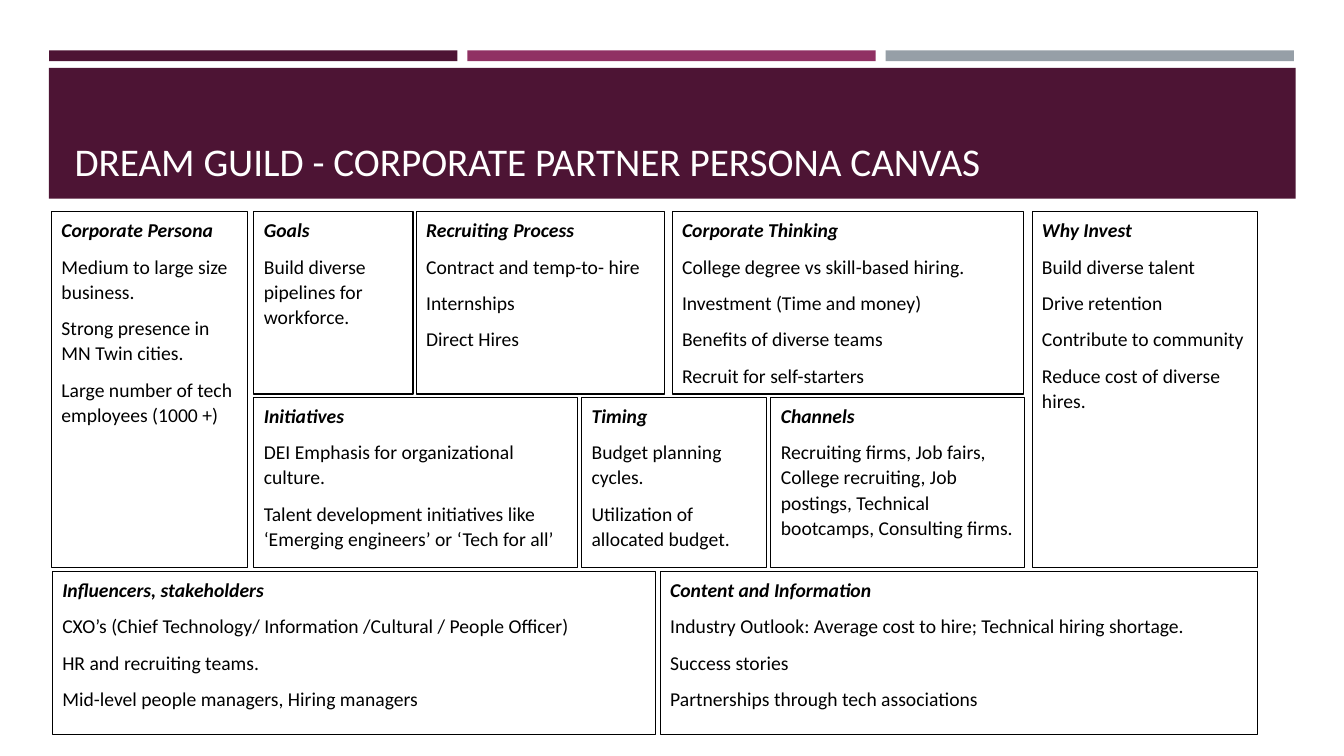
"""Build the corporate partner persona canvas slide."""
import pptx
import pptx.util
import pptx.dml.color
import pptx.enum.shapes
import pptx.enum.text

Cm = pptx.util.Cm
Pt = pptx.util.Pt
RGBColor = pptx.dml.color.RGBColor
RECT = pptx.enum.shapes.MSO_SHAPE.RECTANGLE
ANCHOR = pptx.enum.text.MSO_ANCHOR
ALIGN = pptx.enum.text.PP_ALIGN

PLUM = RGBColor(0x4D, 0x14, 0x34)
BERRY = RGBColor(0x90, 0x31, 0x63)
GRAY = RGBColor(0x96, 0x9F, 0xA7)
WHITE = RGBColor(0xFF, 0xFF, 0xFF)
BLACK = RGBColor(0x00, 0x00, 0x00)

TOP, MID, LOW = 5.33, 10.01, 14.4
TALL, UPPER, LOWER, BASE = 8.97, 4.6, 4.29, 4.1

PANELS = [
    (1.3, TOP, 4.95, TALL, "Corporate Persona", [
        "Medium to large size business.",
        "Strong presence in MN Twin cities.",
        "Large number of tech employees (1000 +)"]),
    (6.4, TOP, 4.01, UPPER, "Goals", [
        "Build diverse pipelines for workforce."]),
    (10.49, TOP, 6.25, UPPER, "Recruiting Process", [
        "Contract and temp-to- hire",
        "Internships",
        "Direct Hires"]),
    (16.94, TOP, 8.86, UPPER, "Corporate Thinking", [
        "College degree vs skill-based hiring.",
        "Investment (Time and money)",
        "Benefits of diverse teams",
        "Recruit for self-starters"]),
    (26.01, TOP, 5.69, TALL, "Why Invest", [
        "Build diverse talent",
        "Drive retention",
        "Contribute to community",
        "Reduce cost of diverse hires."]),
    (6.4, MID, 8.15, LOWER, "Initiatives", [
        "DEI Emphasis for organizational culture.",
        "Talent development initiatives like ‘Emerging engineers’ or ‘Tech for all’"]),
    (14.66, MID, 4.65, LOWER, "Timing", [
        "Budget planning cycles.",
        "Utilization of allocated budget."]),
    (19.43, MID, 6.38, LOWER, "Channels", [
        "Recruiting firms, Job fairs, College recruiting, Job postings, "
        "Technical bootcamps, Consulting firms."]),
    (1.32, LOW, 15.19, BASE, "Influencers, stakeholders", [
        "CXO’s (Chief Technology/ Information /Cultural / People Officer)",
        "HR and recruiting teams.",
        "Mid-level people managers, Hiring managers"]),
    (16.64, LOW, 15.06, BASE, "Content and Information", [
        "Industry Outlook: Average cost to hire; Technical hiring shortage.",
        "Success stories",
        "Partnerships through tech associations"]),
]

deck = pptx.Presentation()
deck.slide_width = Cm(33.87)
deck.slide_height = Cm(19.05)
slide = deck.slides.add_slide(deck.slide_layouts[6])


def add_box(left, top, width, height, fill):
    box = slide.shapes.add_shape(RECT, Cm(left), Cm(top), Cm(width), Cm(height))
    box.shadow.inherit = False
    box.fill.solid()
    box.fill.fore_color.rgb = fill
    box.line.fill.background()
    return box


def style(para, size, color):
    para.alignment = ALIGN.LEFT
    para.font.name = "Calibri"
    para.font.size = Pt(size)
    para.font.color.rgb = color


for col, color in enumerate([PLUM, BERRY, GRAY]):
    add_box(1.24 + col * 10.54, 1.27, 10.29, 0.27, color)
add_box(1.23, 1.71, 31.42, 3.3, PLUM)

title = slide.shapes.add_textbox(Cm(1.63), Cm(1.96), Cm(30.63), Cm(2.82))
title.text_frame.word_wrap = True
title.text_frame.vertical_anchor = ANCHOR.BOTTOM
head = title.text_frame.paragraphs[0]
head.text = "DREAM GUILD - CORPORATE PARTNER PERSONA CANVAS"
style(head, 28, WHITE)

for left, top, width, height, label, items in PANELS:
    panel = add_box(left, top, width, height, WHITE)
    panel.line.color.rgb = BLACK
    panel.line.width = Pt(0.75)
    frame = panel.text_frame
    frame.word_wrap = True
    frame.vertical_anchor = ANCHOR.TOP
    frame.text = "\n".join([label] + items)
    for row, para in enumerate(frame.paragraphs):
        style(para, 14, BLACK)
        para.line_spacing = 1.07
        para.space_before = Pt(8 if row else 0)
        para.font.bold = para.font.italic = row == 0

deck.save("out.pptx")
